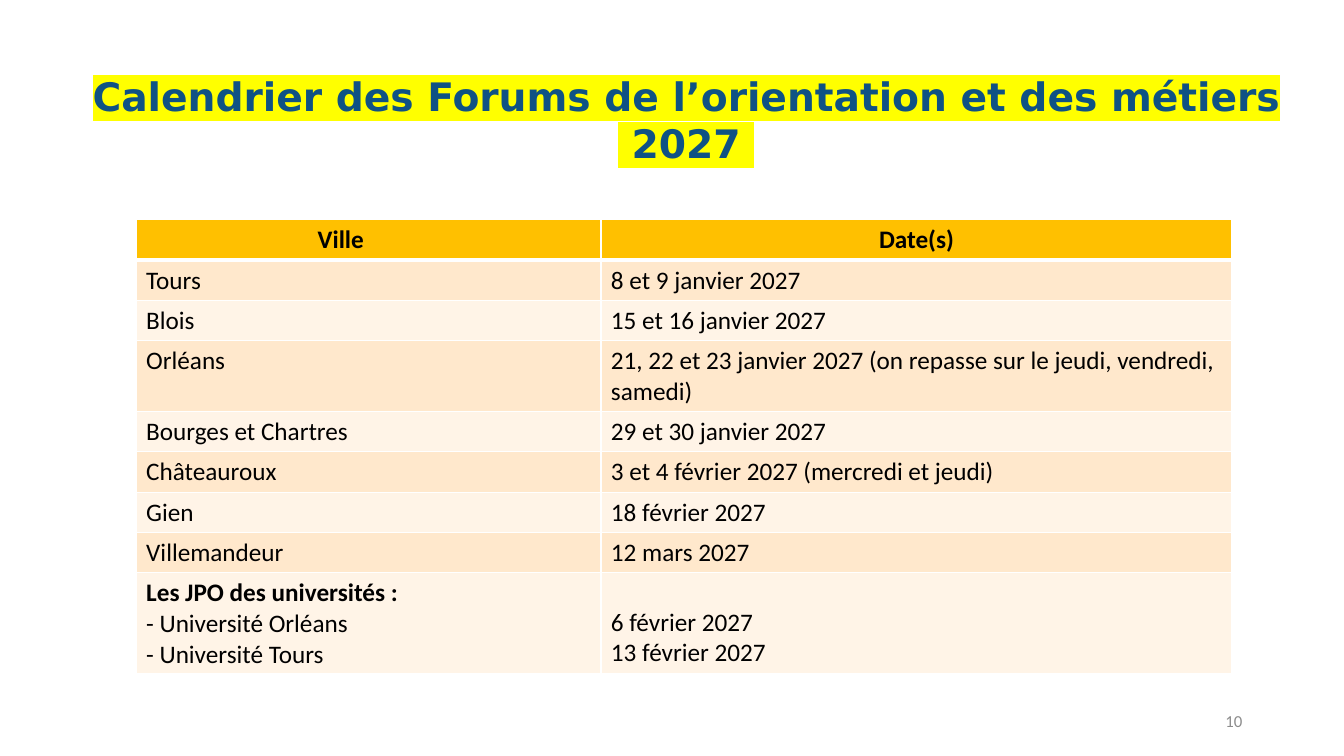
from dataclasses import dataclass

from lxml import etree
from pptx import Presentation
from pptx import util as u
from pptx.dml.color import RGBColor
from pptx.enum import text
from pptx.oxml import ns


@dataclass(frozen=True)
class Theme:
    title_font: str = "DejaVu Sans"
    body_font: str = "Calibri"
    title_size: int = 28
    table_size: int = 18
    number_size: int = 12
    title_color: str = "0F5284"
    highlight: str = "FFFF00"
    ink: str = "000000"
    number_color: str = "8C8C8C"
    header_fill: str = "FFC000"
    bands: tuple = ("FFE8CC", "FFF4E7")
    border: str = "FFFFFF"


DATES = [
    ("Tours", "8 et 9 janvier 2027"),
    ("Blois", "15 et 16 janvier 2027"),
    ("Orléans", "21, 22 et 23 janvier 2027 (on repasse sur le jeudi, vendredi, samedi)"),
    ("Bourges et Chartres", "29 et 30 janvier 2027"),
    ("Châteauroux", "3 et 4 février 2027 (mercredi et jeudi)"),
    ("Gien", "18 février 2027"),
    ("Villemandeur", "12 mars 2027"),
    ("Les JPO des universités :\n- Université Orléans\n- Université Tours",
     "6 février 2027\n13 février 2027"),
]


class SlideBuilder:
    def __init__(self, page, theme):
        self.page = page
        self.theme = theme

    def style(self, para, font, size, color, bold=False, align=text.PP_ALIGN.LEFT):
        para.alignment = align
        para.font.name = font
        para.font.size = u.Pt(size)
        para.font.bold = bold
        para.font.color.rgb = RGBColor.from_string(color)

    def text_box(self, words, left, top, width, height):
        box = self.page.shapes.add_textbox(*map(u.Inches, (left, top, width, height)))
        box.text_frame.word_wrap = True
        box.text_frame.text = words
        return box.text_frame

    def title(self, words, *place):
        frame = self.text_box(words, *place)
        frame.auto_size = text.MSO_AUTO_SIZE.SHAPE_TO_FIT_TEXT
        para = frame.paragraphs[0]
        self.style(para, self.theme.title_font, self.theme.title_size,
                   self.theme.title_color, True, text.PP_ALIGN.CENTER)
        for span in para.runs:
            mark = etree.SubElement(span.font._element, ns.qn("a:highlight"))
            etree.SubElement(mark, ns.qn("a:srgbClr"), val=self.theme.highlight)

    def page_number(self, number, *place):
        frame = self.text_box(number, *place)
        frame.vertical_anchor = text.MSO_ANCHOR.MIDDLE
        self.style(frame.paragraphs[0], self.theme.body_font, self.theme.number_size,
                   self.theme.number_color, align=text.PP_ALIGN.RIGHT)

    def borders(self, cell, top=1, bottom=1):
        properties = cell._tc.get_or_add_tcPr()
        for side, width in (("L", 1), ("R", 1), ("T", top), ("B", bottom)):
            line = etree.SubElement(properties, ns.qn(f"a:ln{side}"), w=str(u.Pt(width)))
            fill = etree.SubElement(line, ns.qn("a:solidFill"))
            etree.SubElement(fill, ns.qn("a:srgbClr"), val=self.theme.border)

    def cell(self, cell, words, row):
        header = row == 0
        cell.text = words
        self.borders(cell, top=3 if row == 1 else 1, bottom=3 if header else 1)
        cell.fill.solid()
        color = self.theme.header_fill if header else self.theme.bands[(row - 1) % 2]
        cell.fill.fore_color.rgb = RGBColor.from_string(color)
        align = text.PP_ALIGN.CENTER if header else text.PP_ALIGN.LEFT
        for para in cell.text_frame.paragraphs:
            self.style(para, self.theme.body_font, self.theme.table_size, self.theme.ink,
                       header or para.text.endswith(":"), align)

    def table(self, rows, left, top, widths, row_height):
        grid = self.page.shapes.add_table(
            len(rows), len(widths), u.Inches(left), u.Inches(top),
            u.Inches(sum(widths)), u.Inches(row_height * len(rows))).table
        for column, width in zip(grid.columns, widths):
            column.width = u.Inches(width)
        for r, row in enumerate(rows):
            for c, words in enumerate(row):
                self.cell(grid.cell(r, c), words, r)
        return grid


def main():
    deck = Presentation()
    deck.slide_width, deck.slide_height = u.Inches(13.33), u.Inches(7.5)
    slide = SlideBuilder(deck.slides.add_slide(deck.slide_layouts[6]), Theme())
    slide.page_number("10", 9.42, 6.95, 3, 0.4)
    slide.title("Calendrier des Forums de l’orientation et des métiers  2027 ",
                0.79, 0.67, 12.03, 1.04)
    calendar = slide.table([("Ville", "Date(s)"), *DATES], 1.35, 2.18, (4.61, 6.26), 0.4)
    calendar.cell(0, 0).margin_right = u.Inches(0.65)
    calendar.cell(len(DATES), 1).vertical_anchor = text.MSO_ANCHOR.BOTTOM
    deck.save("out.pptx")


if __name__ == "__main__":
    main()
